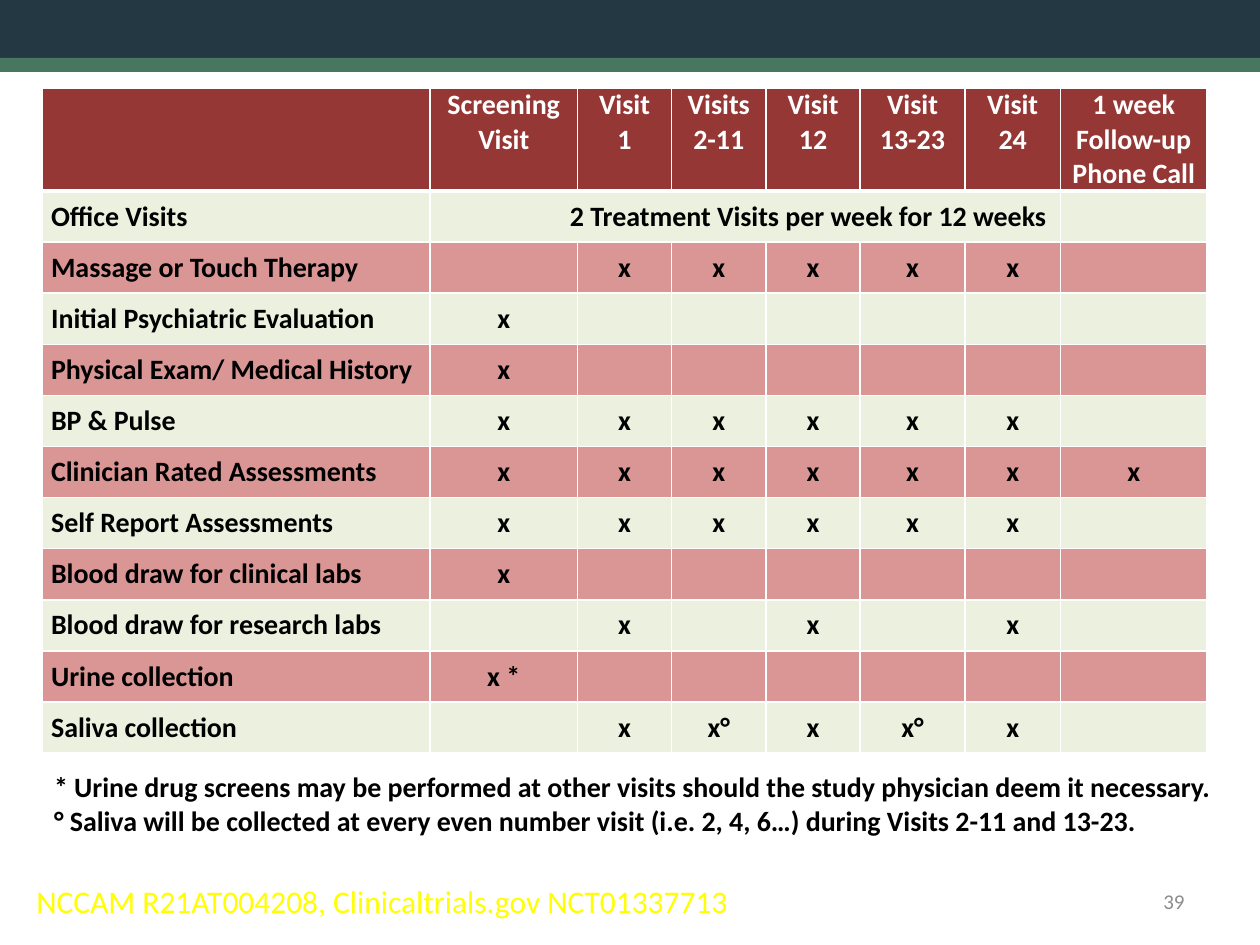
from dataclasses import dataclass

from lxml import etree
from pptx import Presentation
from pptx import util as u
from pptx.dml.color import RGBColor
from pptx.enum import shapes, text
from pptx.oxml import ns

NAVY = RGBColor(0x23, 0x38, 0x43)
GREEN = RGBColor(0x48, 0x76, 0x5F)
MAROON = RGBColor(0x95, 0x37, 0x35)
ROSE = RGBColor(0xD9, 0x96, 0x94)
PALE = RGBColor(0xEB, 0xF1, 0xDE)
WHITE = RGBColor(0xFF, 0xFF, 0xFF)
BLACK = RGBColor(0, 0, 0)
YELLOW = RGBColor(0xFF, 0xFF, 0)
GREY = RGBColor(0x8C, 0x8C, 0x8C)

LEFT, MID, RIGHT = text.PP_ALIGN.LEFT, text.PP_ALIGN.CENTER, text.PP_ALIGN.RIGHT
TOP, CENTRE = text.MSO_ANCHOR.TOP, text.MSO_ANCHOR.MIDDLE


@dataclass
class Band:
    top: float
    height: float
    fill: RGBColor


@dataclass
class Row:
    label: str
    marks: tuple


@dataclass
class Note:
    words: str
    box: tuple
    style: dict
    wrap: bool = True
    anchor: text.MSO_ANCHOR = TOP


BANDS = [Band(0, 1.37, NAVY), Band(1.17, 0.28, GREEN)]
WIDTHS = [7.82, 2.97, 1.9, 1.9, 1.9, 2.11, 1.93, 2.95]
HEADS = ["", "Screening Visit", "Visit\n1", "Visits 2-11", "Visit 12",
         "Visit 13-23", "Visit 24", "1 week Follow-up Phone Call"]
HEAD, STEP = 2.06, 1.03
SPAN = "2 Treatment Visits per week for 12 weeks"
FIRST = ("x",)
ALL = ("x",) * 6
ROWS = [
    Row("Office Visits", (SPAN,)),
    Row("Massage or Touch Therapy", ("",) + ("x",) * 5),
    Row("Initial Psychiatric Evaluation", FIRST),
    Row("Physical Exam/ Medical History", FIRST),
    Row("BP & Pulse", ALL),
    Row("Clinician Rated Assessments", ALL + FIRST),
    Row("Self Report Assessments", ALL),
    Row("Blood draw for clinical labs", FIRST),
    Row("Blood draw for research labs", ("", "x", "", "x", "", "x")),
    Row("Urine collection", ("x *",)),
    Row("Saliva collection", ("", "x", "x°", "x", "x°", "x")),
]
NOTES = [
    Note("* Urine drug screens may be performed at other visits should the study "
         "physician deem it necessary.\n"
         "° Saliva will be collected at every even number visit (i.e. 2, 4, 6…) "
         "during Visits 2-11 and 13-23.",
         (0.84, 15.39, 24.16, 1.63), dict(bold=True), wrap=False),
    Note("NCCAM R21AT004208, Clinicaltrials.gov NCT01337713",
         (0, 17.65, 15.42, 1.32), dict(size=18, color=YELLOW, align=MID)),
    Note("39", (18.21, 17.65, 5.92, 1.02),
         dict(size=12, color=GREY, align=RIGHT), anchor=CENTRE),
]


def put(frame, words: str, *, size: int = 16, bold: bool = False,
        color: RGBColor = BLACK, align=LEFT) -> None:
    for i, line in enumerate(words.split("\n")):
        para = frame.add_paragraph() if i else frame.paragraphs[0]
        para.alignment = align
        if line:
            run = para.add_run()
            run.text = line
            run.font.name = "Calibri"
            run.font.size = u.Pt(size)
            run.font.bold = bold
            run.font.color.rgb = color


def edge(cell, base: int) -> None:
    props = cell._tc.get_or_add_tcPr()
    for side in "LRTB":
        line = etree.SubElement(props, ns.qn(f"a:ln{side}"),
                                w=str(u.Pt(base if side == "B" else 1)))
        fill = etree.SubElement(line, ns.qn("a:solidFill"))
        etree.SubElement(fill, ns.qn("a:srgbClr"), val=str(WHITE))


def fill_cell(cell, words: str, fill: RGBColor, *, base: int = 1,
              anchor=CENTRE, **style) -> None:
    edge(cell, base)
    cell.fill.solid()
    cell.fill.fore_color.rgb = fill
    cell.margin_left = cell.margin_right = u.Cm(0.18)
    cell.margin_top = cell.margin_bottom = 0
    cell.vertical_anchor = anchor
    put(cell.text_frame, words, bold=True, **style)


def draw_band(slide, band: Band, width: int) -> None:
    bar = slide.shapes.add_shape(shapes.MSO_SHAPE.RECTANGLE, 0, u.Cm(band.top),
                                 width, u.Cm(band.height))
    bar.shadow.inherit = False
    bar.fill.solid()
    bar.fill.fore_color.rgb = band.fill
    bar.line.fill.background()


def draw_table(slide) -> None:
    high = HEAD + STEP * len(ROWS)
    grid = slide.shapes.add_table(len(ROWS) + 1, len(WIDTHS), u.Cm(0.85),
                                  u.Cm(1.78), u.Cm(sum(WIDTHS)), u.Cm(high)).table
    grid.first_row = grid.horz_banding = False
    for col, width in zip(grid.columns, WIDTHS):
        col.width = u.Cm(width)
    for i, line in enumerate(grid.rows):
        line.height = u.Cm(STEP if i else HEAD)
    for c, head in enumerate(HEADS):
        fill_cell(grid.cell(0, c), head, MAROON, base=3, anchor=TOP,
                  color=WHITE, align=MID)
    for r, row in enumerate(ROWS, 1):
        fill = PALE if r % 2 else ROSE
        blanks = ("",) * (len(WIDTHS) - 1 - len(row.marks))
        for c, words in enumerate((row.label, *row.marks, *blanks)):
            fill_cell(grid.cell(r, c), words, fill, align=MID if c else LEFT)
    grid.cell(1, 1).merge(grid.cell(1, 6))
    grid.cell(1, 1).margin_left = u.Cm(2.72)


def draw_note(slide, note: Note) -> None:
    frame = slide.shapes.add_textbox(*map(u.Cm, note.box)).text_frame
    frame.word_wrap = note.wrap
    if not note.wrap:
        frame.auto_size = text.MSO_AUTO_SIZE.SHAPE_TO_FIT_TEXT
    frame.vertical_anchor = note.anchor
    put(frame, note.words, **note.style)


def main() -> None:
    deck = Presentation()
    deck.slide_width, deck.slide_height = u.Cm(25.4), u.Cm(19.05)
    slide = deck.slides.add_slide(deck.slide_layouts[6])
    for band in BANDS:
        draw_band(slide, band, deck.slide_width)
    draw_table(slide)
    for note in NOTES:
        draw_note(slide, note)
    deck.save("out.pptx")


if __name__ == "__main__":
    main()
